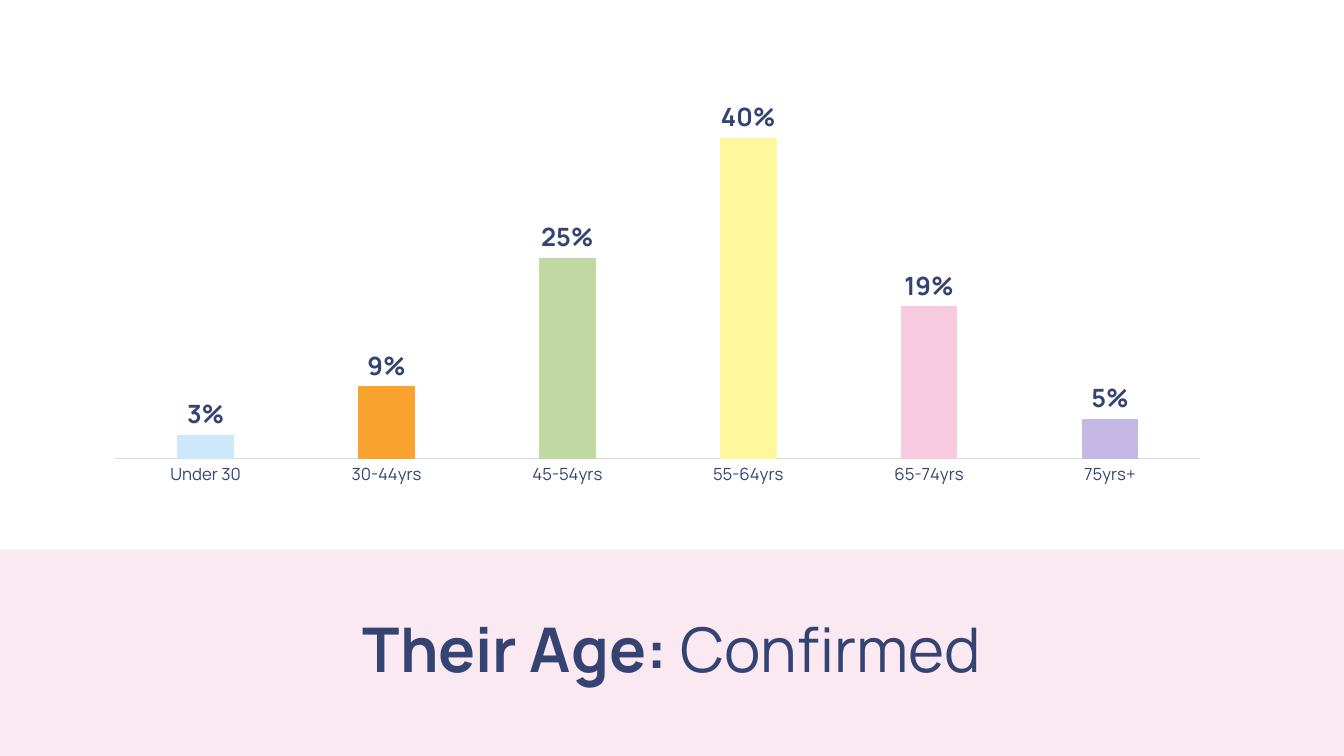
from lxml.etree import SubElement
from pptx import Presentation
from pptx.chart.data import CategoryChartData
from pptx.dml.color import RGBColor
from pptx.enum.chart import XL_CHART_TYPE, XL_LABEL_POSITION, XL_TICK_MARK
from pptx.enum.shapes import MSO_SHAPE
from pptx.enum.text import MSO_ANCHOR, PP_ALIGN
from pptx.oxml.ns import qn
from pptx.util import Inches, Pt

FONT = "Manrope"
NAVY = RGBColor(0x35, 0x43, 0x73)
PINK = RGBColor(0xF7, 0xCA, 0xDF)
GREY = RGBColor(0xD9, 0xD9, 0xD9)
AGES = [
    ("Under 30", 0.03, RGBColor(0xCC, 0xE8, 0xFA)),
    ("30-44yrs", 0.09, RGBColor(0xF8, 0xA4, 0x2E)),
    ("45-54yrs", 0.25, RGBColor(0xC0, 0xD9, 0xA2)),
    ("55-64yrs", 0.40, RGBColor(0xFF, 0xF7, 0x9D)),
    ("65-74yrs", 0.19, PINK),
    ("75yrs+", 0.05, RGBColor(0xC5, 0xB8, 0xE5)),
]


def set_font(font, **formats):
    for name, value in {"name": FONT, **formats}.items():
        setattr(font, name, value)
    font.color.rgb = NAVY


def add_title_band(s, left, top, width, height):
    """Pale band with the title centred in a box inset from its edges."""
    band = s.shapes.add_shape(MSO_SHAPE.RECTANGLE, Inches(left), Inches(top),
                              Inches(width), Inches(height))
    band.shadow.inherit = False
    band.fill.solid()
    band.fill.fore_color.rgb = PINK
    band.line.fill.background()
    color = band.fill._xPr.find(qn("a:solidFill"))[0]
    SubElement(color, qn("a:alpha"), val="40000")

    inset_x, inset_y = 0.92, 0.23
    tb = s.shapes.add_textbox(Inches(left + inset_x), Inches(top + inset_y),
                              Inches(width - 2 * inset_x), Inches(height - 2 * inset_y))
    tf = tb.text_frame
    tf.word_wrap = True
    tf.vertical_anchor = MSO_ANCHOR.MIDDLE
    p = tf.paragraphs[0]
    p.alignment = PP_ALIGN.CENTER
    p.line_spacing = 0.9
    for text, bold in (("Their Age: ", True), ("Confirmed", False)):
        r = p.add_run()
        r.text = text
        set_font(r.font, size=Pt(44), bold=bold)


def add_age_chart(s, left, top, width, height):
    data = CategoryChartData(number_format="0%")
    data.categories = [age for age, _, _ in AGES]
    data.add_series("Series 1", [share for _, share, _ in AGES])
    chart = s.shapes.add_chart(XL_CHART_TYPE.COLUMN_CLUSTERED, Inches(left), Inches(top),
                               Inches(width), Inches(height), data).chart
    chart.has_legend = False
    chart.has_title = False
    set_font(chart.font, size=Pt(12))

    ages = chart.category_axis
    ages.major_tick_mark = XL_TICK_MARK.NONE
    ages.format.line.color.rgb = GREY
    ages.format.line.width = Pt(0.75)
    set_font(ages.tick_labels.font, size=Pt(12), bold=False)

    shares = chart.value_axis
    shares.visible = False
    shares.has_major_gridlines = False
    shares.minimum_scale, shares.maximum_scale = 0, 0.45

    plot = chart.plots[0]
    plot.gap_width, plot.overlap = 219, -27
    plot.vary_by_categories = False
    series = plot.series[0]
    series.format.fill.solid()
    series.format.fill.fore_color.rgb = NAVY
    for i, (_, _, color) in enumerate(AGES):
        fill = series.points[i].format.fill
        fill.solid()
        fill.fore_color.rgb = color

    labels = series.data_labels
    for name, value in {"show_value": True, "number_format": "0%",
                        "number_format_is_linked": False,
                        "position": XL_LABEL_POSITION.OUTSIDE_END}.items():
        setattr(labels, name, value)
    set_font(labels.font, size=Pt(18), bold=True)


def main():
    prs = Presentation()
    prs.slide_width, prs.slide_height = Inches(13.33), Inches(7.5)
    s = prs.slides.add_slide(prs.slide_layouts[6])
    add_title_band(s, 0, 5.45, 13.33, 2.05)
    add_age_chart(s, 0.92, 0.89, 11.21, 4.01)
    prs.save("out.pptx")


if __name__ == "__main__":
    main()
